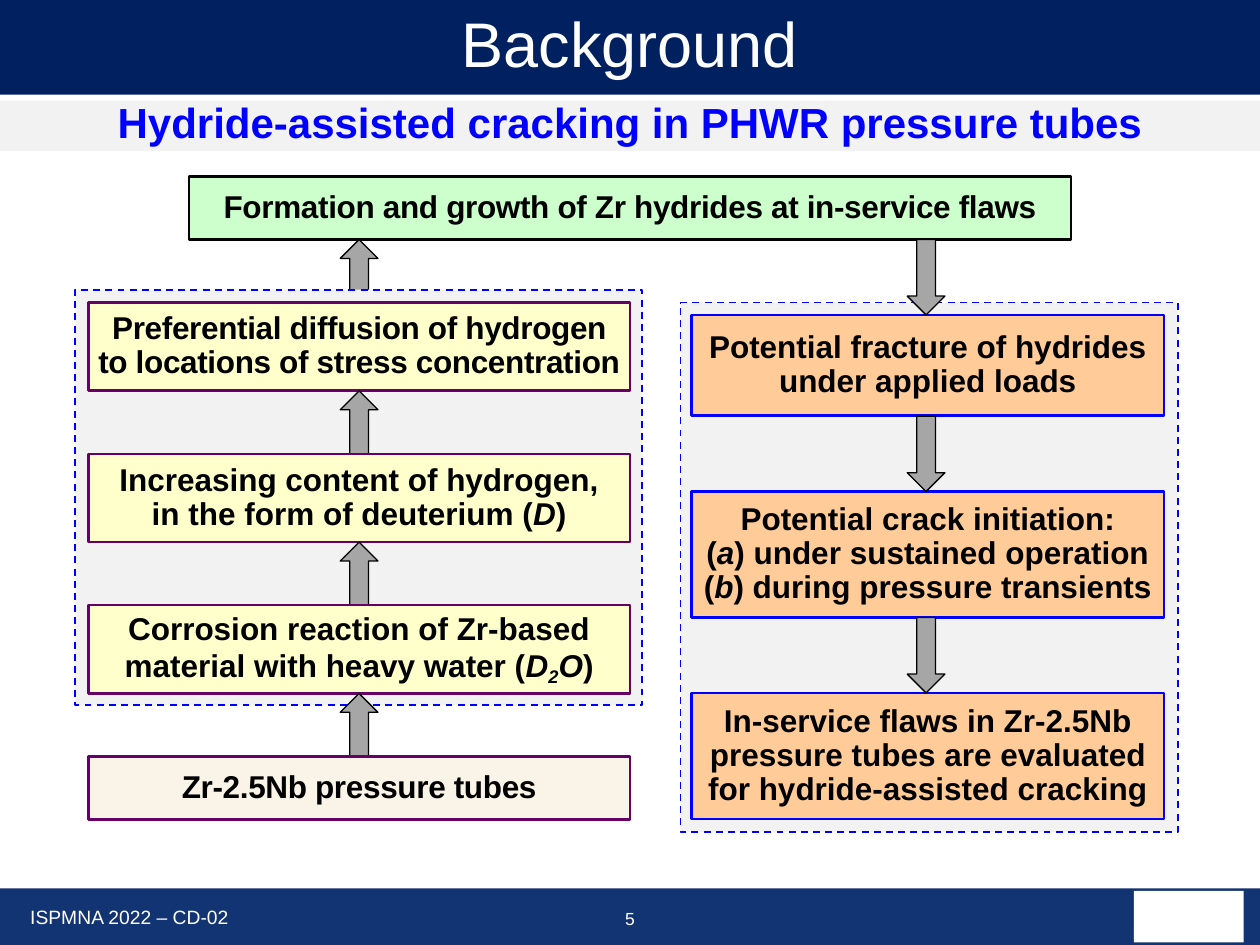
"""Build the Background slide on hydride-assisted cracking."""
import pptx
import pptx.util
import pptx.dml.color
import pptx.enum.dml
import pptx.enum.shapes
import pptx.enum.text

Cm, Pt = pptx.util.Cm, pptx.util.Pt
SHAPE = pptx.enum.shapes.MSO_SHAPE
ALIGN = pptx.enum.text.PP_ALIGN
NAVY, FOOTER, WHITE, BLACK = "002060", "133472", "FFFFFF", "000000"
BLUE, PURPLE, PALE, GREY = "0000FF", "660066", "F2F2F2", "A6A6A6"
GREEN, CREAM, YELLOW, ORANGE = "CCFFCC", "F9F3E8", "FFFFCC", "FFCC99"


def rgb(value):
    return pptx.dml.color.RGBColor.from_string(value)


class Slide:
    def __init__(self, prs, font="Arial"):
        self.s = prs.slides.add_slide(prs.slide_layouts[5])
        self.font = font

    def fill_text(self, sp, lines, size=18, color=BLACK, bold=True, spacing=0.9,
                  track=0, align=ALIGN.CENTER, inset=0.13):
        """Set lines, where *...* is italic and |...| within it is subscript."""
        tf = sp.text_frame
        tf.word_wrap = True
        tf.auto_size = pptx.enum.text.MSO_AUTO_SIZE.NONE
        tf.vertical_anchor = pptx.enum.text.MSO_ANCHOR.MIDDLE
        tf.margin_left = tf.margin_right = Cm(inset)
        tf.margin_top = tf.margin_bottom = Cm(0.1)
        for i, line in enumerate(lines):
            p = tf.add_paragraph() if i else tf.paragraphs[0]
            p.alignment, p.line_spacing = align, spacing
            parts = line.split("*")
            p.text = parts[0]
            for j, part in enumerate(parts[1:], 1):
                for k, piece in enumerate(part.split("|")):
                    r = p.add_run()
                    r.text = piece
                    r.font.italic = j % 2 == 1
                    if k % 2:
                        r._r.get_or_add_rPr().set("baseline", "-20000")
            for r in p.runs:
                r.font.name, r.font.size, r.font.bold = self.font, Pt(size), bold
                r.font.color.rgb = rgb(color)
                if track:
                    r._r.get_or_add_rPr().set("spc", str(track))

    def title(self, text, x, y, w, h):
        sp = self.s.shapes.title
        sp.left, sp.top, sp.width, sp.height = Cm(x), Cm(y), Cm(w), Cm(h)
        sp.fill.solid()
        sp.fill.fore_color.rgb = rgb(NAVY)
        self.fill_text(sp, [text], size=36, color=WHITE, bold=False)

    def shape(self, x, y, w, h, fill, line=None, width=1.5, kind=SHAPE.RECTANGLE):
        sp = self.s.shapes.add_shape(kind, Cm(x), Cm(y), Cm(w), Cm(h))
        sp.shadow.inherit = False
        sp.fill.solid()
        sp.fill.fore_color.rgb = rgb(fill)
        if line:
            sp.line.color.rgb = rgb(line)
            sp.line.width = Pt(width)
        else:
            sp.line.fill.background()
        return sp

    def box(self, lines, x, y, w, h, fill, line=None, **style):
        self.fill_text(self.shape(x, y, w, h, fill, line), lines, **style)

    def panel(self, x, y, w, h):
        sp = self.shape(x, y, w, h, PALE, BLUE, 1)
        sp.line.dash_style = pptx.enum.dml.MSO_LINE.DASH

    def arrow(self, kind, x, y, h):
        self.shape(x, y, 0.76, h, GREY, BLACK, 0.75, kind)

    def label(self, text, x, y, w, h, **style):
        sp = self.s.shapes.add_textbox(Cm(x), Cm(y), Cm(w), Cm(h))
        self.fill_text(sp, [text], color=WHITE, bold=False, spacing=1, **style)


def main():
    prs = pptx.Presentation()
    prs.slide_width, prs.slide_height = Cm(25.4), Cm(19.05)
    s = Slide(prs)

    s.title("Background", 0, 0, 25.4, 1.91)
    s.box(["Hydride-assisted cracking in PHWR pressure tubes"],
          0, 2.03, 25.4, 1.02, PALE, size=24, color=BLUE, spacing=0.85)
    s.box(["ISPMNA 2022 – CD-02"], 0, 17.91, 25.4, 1.14, FOOTER, size=11,
          color=WHITE, bold=False, spacing=1, align=ALIGN.LEFT, inset=0.61)
    s.label("5", 12.04, 18.16, 1.32, 0.7, size=10)
    s.shape(22.86, 17.96, 2.21, 1.04, WHITE)

    s.box(["Formation and growth of Zr hydrides at in-service flaws"],
          3.81, 3.56, 17.78, 1.27, GREEN, BLACK, track=-20)

    left, width, top, step, height = 1.78, 10.92, 6.1, 3.05, 1.78
    s.arrow(SHAPE.UP_ARROW, 6.86, top - 1.27, 1.27)
    s.panel(1.52, 5.84, 11.43, 8.38)
    causes = [
        ("Preferential diffusion of hydrogen to locations of stress concentration", -20),
        ("Increasing content of hydrogen,\vin the form of deuterium (*D*)", 0),
        ("Corrosion reaction of Zr-based material with heavy water (*D|2|O*)", 0),
    ]
    for i, (text, track) in enumerate(causes):
        y = top + i * step
        s.box([text], left, y, width, height, YELLOW, PURPLE, track=track)
        s.arrow(SHAPE.UP_ARROW, 6.86, y + height, 1.27)
    s.box(["Zr-2.5Nb pressure tubes"], left, top + 3 * step, width, 1.27,
          CREAM, PURPLE, track=-20)

    s.panel(13.72, 6.1, 10.03, 10.67)
    effects = [
        (["Potential fracture of hydrides under applied loads"], 6.35, 2.03),
        (["Potential crack initiation:", "(*a*) under sustained operation",
          "(*b*) during pressure transients"], 9.91, 2.54),
        (["In-service flaws in Zr-2.5Nb pressure tubes are evaluated "
          "for hydride-assisted cracking"], 13.97, 2.54),
    ]
    for lines, y, h in effects:
        s.box(lines, 13.94, y, 9.53, h, ORANGE, BLUE)
        s.arrow(SHAPE.DOWN_ARROW, 18.29, y - 1.52, 1.52)

    prs.save("out.pptx")


if __name__ == "__main__":
    main()
